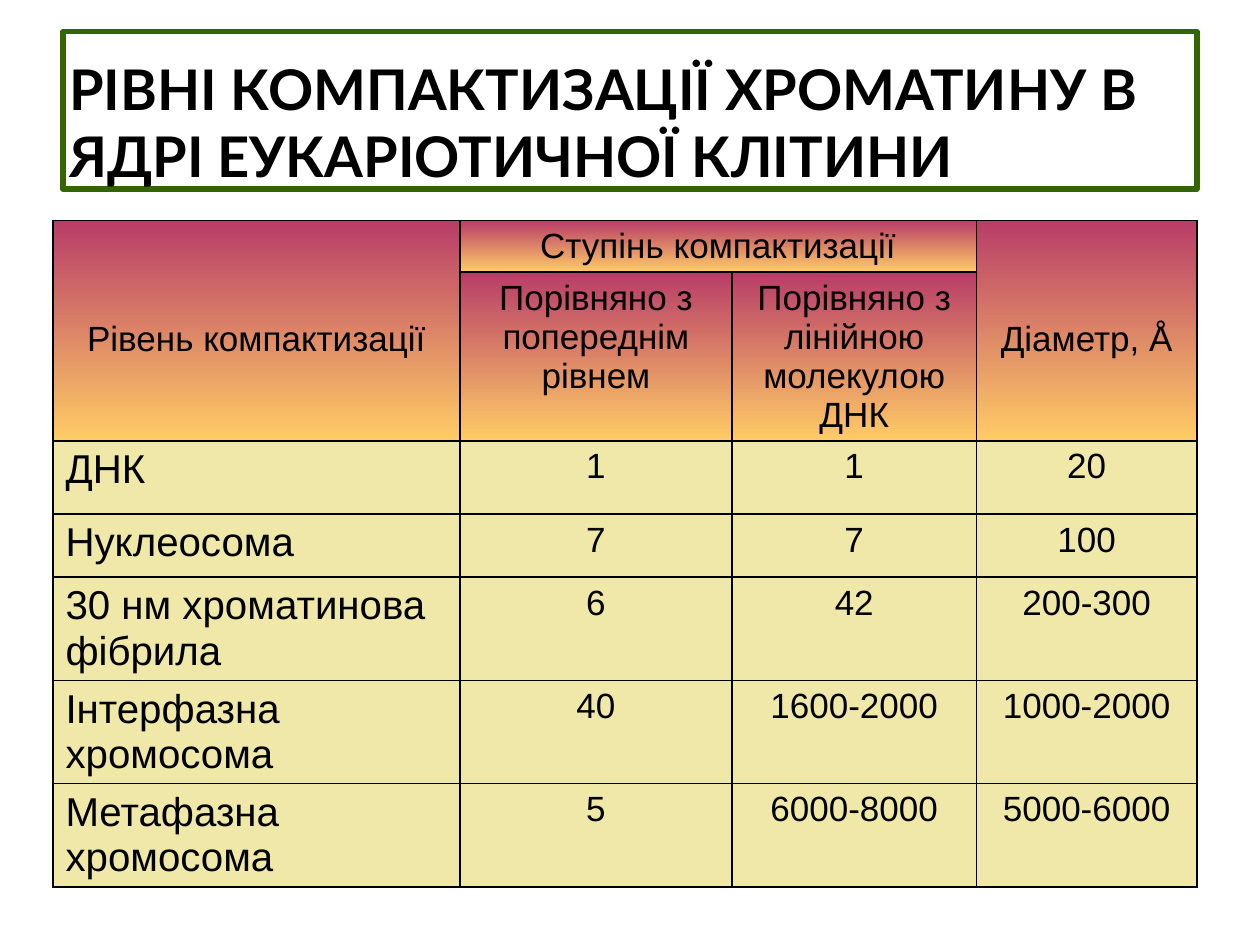
from lxml.etree import SubElement
from pptx import Presentation
from pptx.dml.color import RGBColor
from pptx.enum.shapes import MSO_SHAPE
from pptx.enum.text import MSO_ANCHOR, PP_ALIGN
from pptx.oxml.ns import qn
from pptx.util import Inches, Pt

COLORS = {
    "text": "000000",
    "paper": "FFFFFF",
    "frame": "336600",
    "header_top": "B83D68",
    "header_bottom": "FFCC66",
    "body": "EFE8A9",
}
TITLE = "РІВНІ КОМПАКТИЗАЦІЇ ХРОМАТИНУ В ЯДРІ ЕУКАРІОТИЧНОЇ КЛІТИНИ"
COLUMN_WIDTHS = [3.23, 2.16, 1.94, 1.75]
ROW_HEIGHTS = [0.41, 1.34, 0.58, 0.5, 0.82, 0.82, 0.82]
HEADERS = [
    (0, 0, 1, 0, "Рівень компактизації"),
    (0, 1, 0, 2, "Ступінь компактизації"),
    (0, 3, 1, 3, "Діаметр, Å"),
    (1, 1, 1, 1, "Порівняно з попереднім рівнем"),
    (1, 2, 1, 2, "Порівняно з лінійною молекулою ДНК"),
]
LEVELS = [
    ("ДНК", "1", "1", "20"),
    ("Нуклеосома", "7", "7", "100"),
    ("30 нм хроматинова фібрила", "6", "42", "200-300"),
    ("Інтерфазна хромосома", "40", "1600-2000", "1000-2000"),
    ("Метафазна хромосома", "5", "6000-8000", "5000-6000"),
]


def rgb(name):
    return RGBColor.from_string(COLORS[name])


def write(frame, text, size, font, align, bold=False):
    paragraph = frame.paragraphs[0]
    paragraph.alignment = align
    run = paragraph.add_run()
    run.text = text
    run.font.size = Pt(size)
    run.font.name = font
    run.font.bold = bold
    run.font.color.rgb = rgb("text")


def add_title(slide):
    title = slide.shapes.add_shape(
        MSO_SHAPE.RECTANGLE, Inches(0.5), Inches(0.25), Inches(9), Inches(1.25)
    )
    title.shadow.inherit = False
    title.fill.solid()
    title.fill.fore_color.rgb = rgb("paper")
    title.line.color.rgb = rgb("frame")
    title.line.width = Pt(3)
    frame = title.text_frame
    frame.word_wrap = True
    frame.vertical_anchor = MSO_ANCHOR.BOTTOM
    frame.margin_left = frame.margin_right = Inches(0.05)
    frame.margin_top = frame.margin_bottom = 0
    write(frame, TITLE, 32, "Lato", PP_ALIGN.LEFT, bold=True)


def add_borders(cell):
    properties = cell._tc.get_or_add_tcPr()
    for index, side in enumerate(("a:lnL", "a:lnR", "a:lnT", "a:lnB")):
        border = SubElement(properties, qn(side), w=str(Pt(1)))
        fill = SubElement(border, qn("a:solidFill"))
        SubElement(fill, qn("a:srgbClr"), val=COLORS["text"])
        properties.insert(index, border)


def fill_header(cell):
    cell.fill.gradient()
    cell.fill.gradient_angle = 270
    for stop, name in zip(cell.fill.gradient_stops, ("header_top", "header_bottom")):
        stop.color.rgb = rgb(name)


def fill_body(cell):
    cell.fill.solid()
    cell.fill.fore_color.rgb = rgb("body")


def add_headers(table):
    for top, left, bottom, right, text in HEADERS:
        cell = table.cell(top, left)
        if (top, left) != (bottom, right):
            cell.merge(table.cell(bottom, right))
        if bottom > top:
            cell.vertical_anchor = MSO_ANCHOR.MIDDLE
            cell.margin_top = Inches(0.18)
        write(cell.text_frame, text, 20, "Arial", PP_ALIGN.CENTER)


def add_levels(table):
    for row, level in enumerate(LEVELS, start=2):
        for column, text in enumerate(level):
            size, align = (20, PP_ALIGN.CENTER) if column else (23, PP_ALIGN.LEFT)
            write(table.cell(row, column).text_frame, text, size, "Arial", align)


def add_compaction_table(slide):
    table = slide.shapes.add_table(
        len(ROW_HEIGHTS), len(COLUMN_WIDTHS), Inches(0.42), Inches(1.75),
        Inches(sum(COLUMN_WIDTHS)), Inches(sum(ROW_HEIGHTS)),
    ).table
    table.first_row = table.horz_banding = False
    for column, width in zip(table.columns, COLUMN_WIDTHS):
        column.width = Inches(width)
    for index, height in enumerate(ROW_HEIGHTS):
        table.rows[index].height = Inches(height)
        for cell in table.rows[index].cells:
            fill_header(cell) if index < 2 else fill_body(cell)
            add_borders(cell)
    add_headers(table)
    add_levels(table)


def main():
    deck = Presentation()
    deck.slide_width = Inches(10)
    deck.slide_height = Inches(7.5)
    slide = deck.slides.add_slide(deck.slide_layouts[6])
    add_title(slide)
    add_compaction_table(slide)
    deck.save("out.pptx")


if __name__ == "__main__":
    main()
